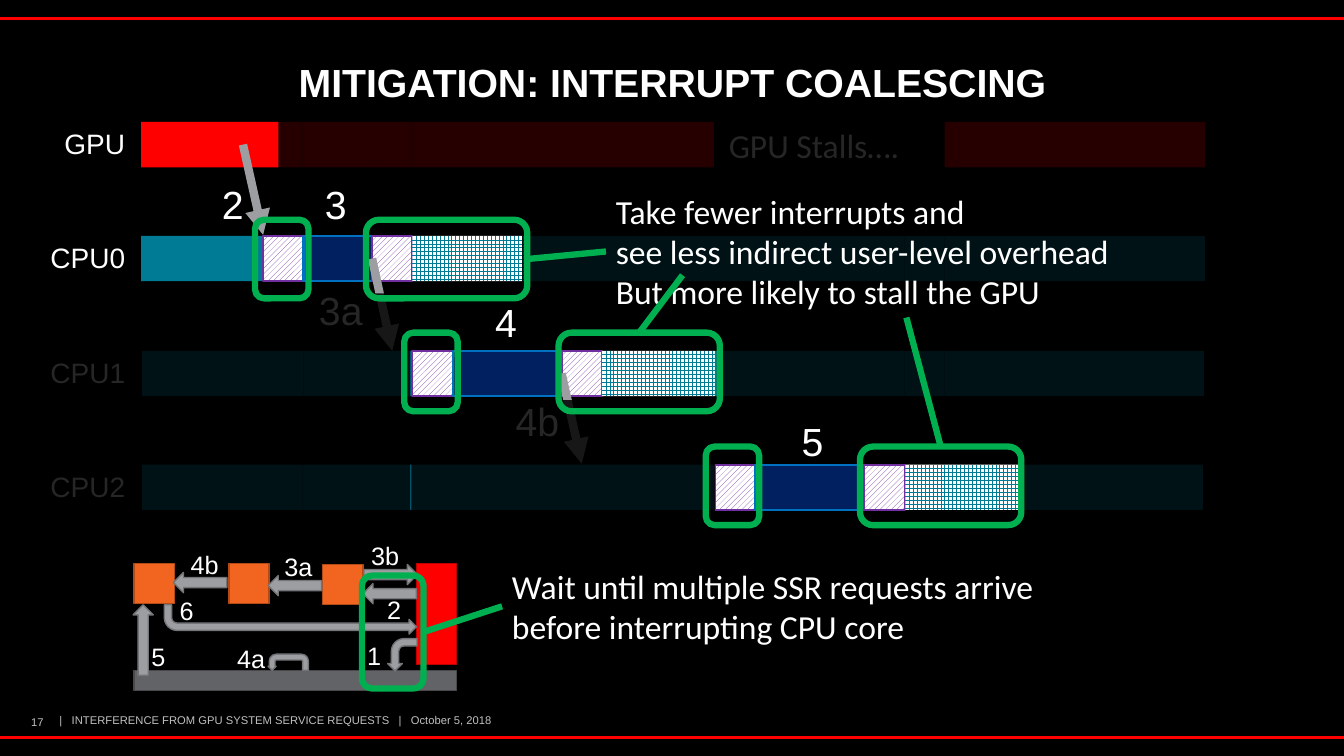
from lxml import etree
from pptx import Presentation
from pptx.dml.color import RGBColor
from pptx.enum.dml import MSO_PATTERN
from pptx.enum.shapes import MSO_CONNECTOR, MSO_SHAPE
from pptx.enum.text import MSO_ANCHOR, PP_ALIGN
from pptx.oxml.ns import qn
from pptx.util import Inches, Pt

RECTANGLE, ROUNDED = MSO_SHAPE.RECTANGLE, MSO_SHAPE.ROUNDED_RECTANGLE
LEFT_ARROW, BENT_ARROW, UTURN_ARROW = MSO_SHAPE.LEFT_ARROW, MSO_SHAPE.BENT_ARROW, MSO_SHAPE.U_TURN_ARROW
DIAGONAL, GRID = MSO_PATTERN.WIDE_UPWARD_DIAGONAL, MSO_PATTERN.LARGE_GRID
LEFT, CENTER, RIGHT = PP_ALIGN.LEFT, PP_ALIGN.CENTER, PP_ALIGN.RIGHT
TOP, MIDDLE = MSO_ANCHOR.TOP, MSO_ANCHOR.MIDDLE
TOP_SIDE, LEFT_SIDE, BOTTOM_SIDE, RIGHT_SIDE = range(4)

COLORS = {
    "black": "000000", "white": "FFFFFF", "red": "FF0000", "dark red": "BD0000",
    "teal": "007B96", "purple": "7030A0", "navy": "002060", "blue": "0070C0",
    "green": "00B050", "orange": "F16521", "dark orange": "B24B18",
    "gray": "9C9EA2", "mid gray": "737578", "slate": "626366",
    "dark slate": "49494B", "light gray": "C1C1C1",
}

TITLE = "MITIGATION: INTERRUPT COALESCING"
FOOTER = "|   INTERFERENCE FROM GPU SYSTEM SERVICE REQUESTS   |   October 5, 2018"
PAGE_NUMBER = "17"

BAR_HEIGHT = 0.45
BAR_STYLES = {
    "gpu": ("red", None, None),
    "user": ("teal", None, None),
    "interrupt": ("purple", DIAGONAL, "purple"),
    "work": ("navy", None, "blue"),
    "overhead": ("teal", GRID, None),
}
HANDLER = ["interrupt", "work", "interrupt", "overhead"]
TIMELINES = {
    "GPU": (1.21, [1.4, 2.41, 3, 3.66, 4.09, 5.97, 7.08, 9.37, 11.95],
            ["gpu"] * 6 + ["stall", "gpu"]),
    "CPU0": (2.34, [1.4, 2.61, 3.01, 3.69, 4.09, 5.21, 5.97, 7.09, 7.48, 8.56, 8.97, 9.37, 11.95],
             ["user"] + HANDLER + ["user"] * 7),
    "CPU1": (3.48, [1.41, 2.61, 3.01, 3.69, 4.09, 4.49, 5.57, 5.97, 7.09, 7.48, 8.56, 8.97, 9.37, 11.94],
             ["user"] * 4 + HANDLER + ["user"] * 5),
    "CPU2": (4.61, [1.41, 2.61, 3, 3.67, 4.08, 5.97, 7.09, 7.49, 8.57, 8.98, 10.1, 11.93],
             ["user"] * 6 + HANDLER + ["user"]),
}
STEP_ARROWS = [
    (("GPU", 0), (2.61, 2.33), None),
    (("CPU0", 2), (3.89, 3.48), ("CPU1", 3)),
    (("CPU1", 5), (5.77, 4.6), None),
]
STEP_LABELS = [("2", 2.31, 1.74), ("3", 3.33, 1.74), ("3a", 3.38, 2.79),
               ("4", 5.02, 2.91), ("4b", 5.33, 3.89), ("5", 8.06, 4.09)]

DIAGRAM_BLOCKS = [
    (4.13, 5.59, 0.4, 1, "red", "dark red"),
    (3.2, 5.6, 0.4, 0.4, "orange", "dark orange"),
    (1.33, 5.59, 0.4, 0.4, "orange", "dark orange"),
    (2.27, 5.59, 0.4, 0.4, "orange", "dark orange"),
    (1.33, 6.65, 3.2, 0.2, "slate", "dark slate"),
]
DIAGRAM_ARROWS = [
    (BENT_ARROW, 3.83, 6.35, 0.32, 0.29, 270),
    (LEFT_ARROW, 3.6, 5.79, 0.53, 0.2, 0),
    (LEFT_ARROW, 3.61, 5.6, 0.53, 0.2, 180),
    (LEFT_ARROW, 2.66, 5.71, 0.53, 0.2, 0),
    (LEFT_ARROW, 1.72, 5.68, 0.53, 0.2, 0),
    (LEFT_ARROW, 1.07, 6.25, 0.7, 0.2, 90),
    (UTURN_ARROW, 2.66, 6.49, 0.4, 0.16, 0),
    (BENT_ARROW, 1.63, 6, 2.5, 0.29, 180),
]
UTURN_ADJUSTMENTS = [0.362, 0.25, 0.25, 0.438, 1]
DIAGRAM_LABELS = [("1", 3.71, 6.35), ("2", 3.91, 5.9), ("3a", 2.96, 5.47), ("3b", 3.82, 5.36),
                  ("4a", 2.49, 6.38), ("4b", 2.03, 5.45), ("5", 1.57, 6.36), ("6", 1.85, 5.91)]

VEILS = [(0.37, 2.91, 3.7, 2.33), (5.18, 2.1, 7.44, 1.14), (2.76, 1.14, 4.35, 0.65),
         (7.11, 3.25, 4.86, 0.84), (4.08, 3.97, 3.01, 1.48), (10.12, 4.31, 1.86, 1.14),
         (9.16, 1.08, 3.93, 0.78), (7.09, 1.08, 2.27, 0.78)]
RINGS = {"wait": (3.59, 5.71, 0.61, 1.12)}
for cpu, ring_left, ring_top in [("CPU0", 2.53, 2.18), ("CPU1", 4.01, 3.3), ("CPU2", 7, 4.43)]:
    RINGS[cpu + " entry"] = (ring_left, ring_top, 0.53, 0.78)
    RINGS[cpu + " exit"] = (ring_left + (1.1 if cpu == "CPU0" else 1.53), ring_top, 1.6, 0.78)
CALLOUTS = {
    "wait": (4.98, 5.56, 5.96, 0.91,
             ["Wait until multiple SSR requests arrive before interrupting CPU core"]),
    "fewer": (6.01, 1.84, 5.96, 1.31,
              ["Take fewer interrupts and", "see less indirect user-level overhead",
               "But more likely to stall the GPU"]),
}
CALLOUT_LINES = [
    ("wait", RIGHT_SIDE, "wait", LEFT_SIDE),
    ("CPU0 exit", RIGHT_SIDE, "fewer", LEFT_SIDE),
    ("CPU1 exit", TOP_SIDE, None, (6.77, 2.73)),
    ("CPU2 exit", TOP_SIDE, "fewer", BOTTOM_SIDE),
]

presentation = Presentation()
presentation.slide_width, presentation.slide_height = Inches(13.33), Inches(7.5)
slide = presentation.slides.add_slide(presentation.slide_layouts[5])
slide.background.fill.solid()
slide.background.fill.fore_color.rgb = RGBColor.from_string(COLORS["black"])


def color(name):
    return RGBColor.from_string(COLORS[name])


def add_shape(kind, box, fill=None, line=None, line_width=1, pattern=None):
    shape = slide.shapes.add_shape(kind, *map(Inches, box))
    shape.shadow.inherit = False
    if pattern is not None:
        shape.fill.patterned()
        shape.fill.pattern = pattern
        shape.fill.back_color.rgb = color("white")
        shape.fill.fore_color.rgb = color(fill)
    elif fill:
        shape.fill.solid()
        shape.fill.fore_color.rgb = color(fill)
    else:
        shape.fill.background()
    if line:
        shape.line.color.rgb = color(line)
        shape.line.width = Pt(line_width)
    else:
        shape.line.fill.background()
    return shape


def write(shape, lines, size, align=LEFT, font="Arial", tint="white", anchor=TOP, wrap=True):
    frame = shape.text_frame
    frame.word_wrap = wrap
    frame.vertical_anchor = anchor
    for index, line in enumerate(lines):
        paragraph = frame.add_paragraph() if index else frame.paragraphs[0]
        paragraph.text = line
        paragraph.alignment = align
        paragraph.font.size = Pt(size)
        paragraph.font.name = font
        paragraph.font.color.rgb = color(tint)
    return frame


def add_text(box, lines, size, **options):
    shape = slide.shapes.add_textbox(*map(Inches, box))
    write(shape, lines, size, **options)
    return shape


def add_line(start, end, tint, width, arrow=False):
    connector = slide.shapes.add_connector(MSO_CONNECTOR.STRAIGHT, *map(Inches, start + end))
    connector.line.color.rgb = color(tint)
    connector.line.width = Pt(width)
    if arrow:
        etree.SubElement(connector.line._get_or_add_ln(), qn("a:tailEnd"), type="triangle")
    etree.SubElement(connector.element.spPr, qn("a:effectLst"))
    return connector


def remove_insets(frame, sides):
    for side in sides:
        setattr(frame, "margin_" + side, 0)


for rule_top in (0.18, 7.32):
    add_line((0, rule_top), (13.33, rule_top), "red", 2)
footer = add_text((0.59, 7.03, 4.34, 0.23), [FOOTER], 8, tint="light gray", anchor=MIDDLE, wrap=False)
remove_insets(footer.text_frame, ["left", "right"])
add_text((0.18, 7.05, 0.38, 0.22), [PAGE_NUMBER], 8, align=CENTER, tint="light gray", anchor=MIDDLE)

title = slide.shapes.title
title.left, title.top, title.width, title.height = map(Inches, (0.43, 0.49, 12.48, 0.7))
heading = write(title, [TITLE], 28, align=CENTER, anchor=MIDDLE).paragraphs[0]
heading.font.bold = True
heading.line_spacing = 0.9

for *box, fill, outline in DIAGRAM_BLOCKS:
    add_shape(RECTANGLE, box, fill, outline)
for kind, *box, rotation in DIAGRAM_ARROWS:
    arrow = add_shape(kind, box, "gray", "mid gray")
    arrow.rotation = rotation
    if kind != LEFT_ARROW:
        arrow.element.spPr.xfrm.set("flipH", "1")
    if kind == UTURN_ARROW:
        for index, value in enumerate(UTURN_ADJUSTMENTS):
            arrow.adjustments[index] = value
for label, center, top in DIAGRAM_LABELS:
    label_box = add_text((center - 0.17, top, 0.34, 0.3), [label], 18, align=CENTER)
    remove_insets(label_box.text_frame, ["left", "top", "right", "bottom"])

bars = {}
for name, (top, edges, kinds) in TIMELINES.items():
    add_text((0.33, top, 1.01, BAR_HEIGHT), [name], 20, align=RIGHT)
    for index, (kind, start, end) in enumerate(zip(kinds, edges, edges[1:])):
        if kind == "stall":
            add_text((start + 0.05, top - 0.02, 2.12, 0.5), ["GPU Stalls…."], 24, font="Calibri")
            continue
        fill, pattern, outline = BAR_STYLES[kind]
        box = (start, top, end - start, BAR_HEIGHT)
        bars[name, index] = add_shape(RECTANGLE, box, fill, outline, 1.5, pattern)
for source, end, target in STEP_ARROWS:
    connector = add_line(end, end, "gray", 6, arrow=True)
    connector.begin_connect(bars[source], RIGHT_SIDE)
    if target:
        connector.end_connect(bars[target], TOP_SIDE)
for label, center, top in STEP_LABELS:
    add_text((center - 0.35, top, 0.7, 0.57), [label], 28, align=CENTER)

for box in VEILS:
    veil = add_shape(RECTANGLE, box, "black")
    veil_color = veil.element.spPr.find(qn("a:solidFill")).find(qn("a:srgbClr"))
    etree.SubElement(veil_color, qn("a:alpha"), val="85000")

rings = {name: add_shape(ROUNDED, box, None, "green", 4.5) for name, box in RINGS.items()}
callouts = {name: add_text(box, lines, 24, font="Calibri") for name, (*box, lines) in CALLOUTS.items()}
for ring, ring_side, callout, end in CALLOUT_LINES:
    connector = add_line((0, 0), (0, 0) if callout else end, "green", 4.5)
    connector.begin_connect(rings[ring], ring_side)
    if callout:
        connector.end_connect(callouts[callout], end)

presentation.save("out.pptx")
